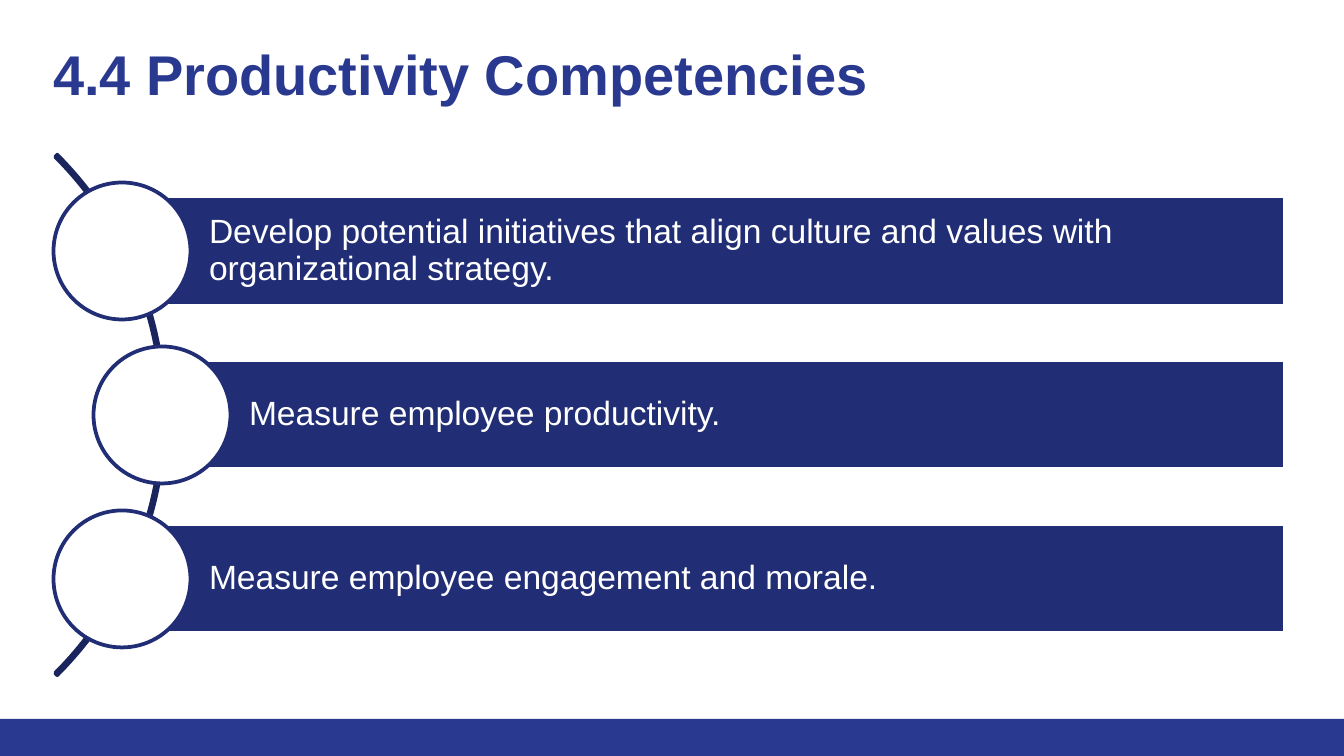
from pptx import Presentation
from pptx.dml.color import RGBColor
from pptx.enum.shapes import MSO_SHAPE as Shape
from pptx.enum.text import MSO_ANCHOR as Anchor, MSO_AUTO_SIZE as AutoSize, PP_ALIGN as Align
from pptx.util import Emu, Pt

WIDTH, HEIGHT = 1344, 756
SCALE = 914400 / 134.4
BRAND, NAVY, DEEP, WHITE = "2A3990", "212D74", "1A245D", "FFFFFF"


def px(length):
    return Emu(round(length * SCALE))


def color(value):
    return RGBColor.from_string(value)


class Page:
    font = "Arial"
    line_width = Pt(2)

    def __init__(self, deck):
        self.slide = deck.slides.add_slide(deck.slide_layouts[5])

    def add_text(self, box, text, size, ink, anchor, insets, bold=False):
        frame = box.text_frame
        frame.word_wrap = True
        frame.auto_size = AutoSize.NONE
        frame.vertical_anchor = anchor
        frame.margin_left, frame.margin_top, frame.margin_right, frame.margin_bottom = map(px, insets)
        para = frame.paragraphs[0]
        para.alignment = Align.LEFT
        span = para.add_run()
        span.text = text
        span.font.name = self.font
        span.font.size = Pt(size)
        span.font.bold = bold
        span.font.color.rgb = color(ink)
        return para

    def title(self, text, left, top, width, height):
        box = self.slide.shapes.title
        box.left, box.top, box.width, box.height = map(px, (left, top, width, height))
        self.add_text(box, text, 30, BRAND, Anchor.TOP, (13, 13, 13, 13), bold=True)

    def shape(self, kind, left, top, width, height, fill=None, line=None):
        box = self.slide.shapes.add_shape(kind, *map(px, (left, top, width, height)))
        box.shadow.inherit = False
        if fill:
            box.fill.solid()
            box.fill.fore_color.rgb = color(fill)
        else:
            box.fill.background()
        if line:
            box.line.color.rgb = color(line)
            box.line.width = self.line_width
        else:
            box.line.fill.background()
        return box

    def arc(self, center_x, center_y, radius):
        box = self.shape(Shape.BLOCK_ARC, center_x - radius, center_y - radius,
                         2 * radius, 2 * radius, line=DEEP)
        for index, value in enumerate((189, 27, 0.004)):
            box.adjustments[index] = value

    def bar(self, text, left, top, right, height):
        box = self.shape(Shape.RECTANGLE, left, top, right - left, height, NAVY, WHITE)
        para = self.add_text(box, text, 18, WHITE, Anchor.MIDDLE, (87, 7, 7, 7))
        para.line_spacing = 0.9

    def circle(self, center_x, center_y, size):
        self.shape(Shape.OVAL, center_x - size / 2, center_y - size / 2, size, size, WHITE, NAVY)


def main():
    deck = Presentation()
    deck.slide_width, deck.slide_height = px(WIDTH), px(HEIGHT)
    page = Page(deck)
    page.shape(Shape.RECTANGLE, 0, 719, WIDTH, 37, BRAND)
    page.title("4.4 Productivity Competencies", 40, 27, 1253, 89)

    middle, pitch, bar_height = 415, 164, 109
    page.arc(-203, middle, 368)
    competencies = [
        (122, "Develop potential initiatives that align culture and values with organizational strategy."),
        (162, "Measure employee productivity."),
        (122, "Measure employee engagement and morale."),
    ]
    for row, (left, text) in enumerate(competencies):
        center_y = middle + (row - 1) * pitch
        page.bar(text, left, center_y - bar_height / 2, 1285, bar_height)
        page.circle(left, center_y, 137)

    deck.save("out.pptx")


if __name__ == "__main__":
    main()
